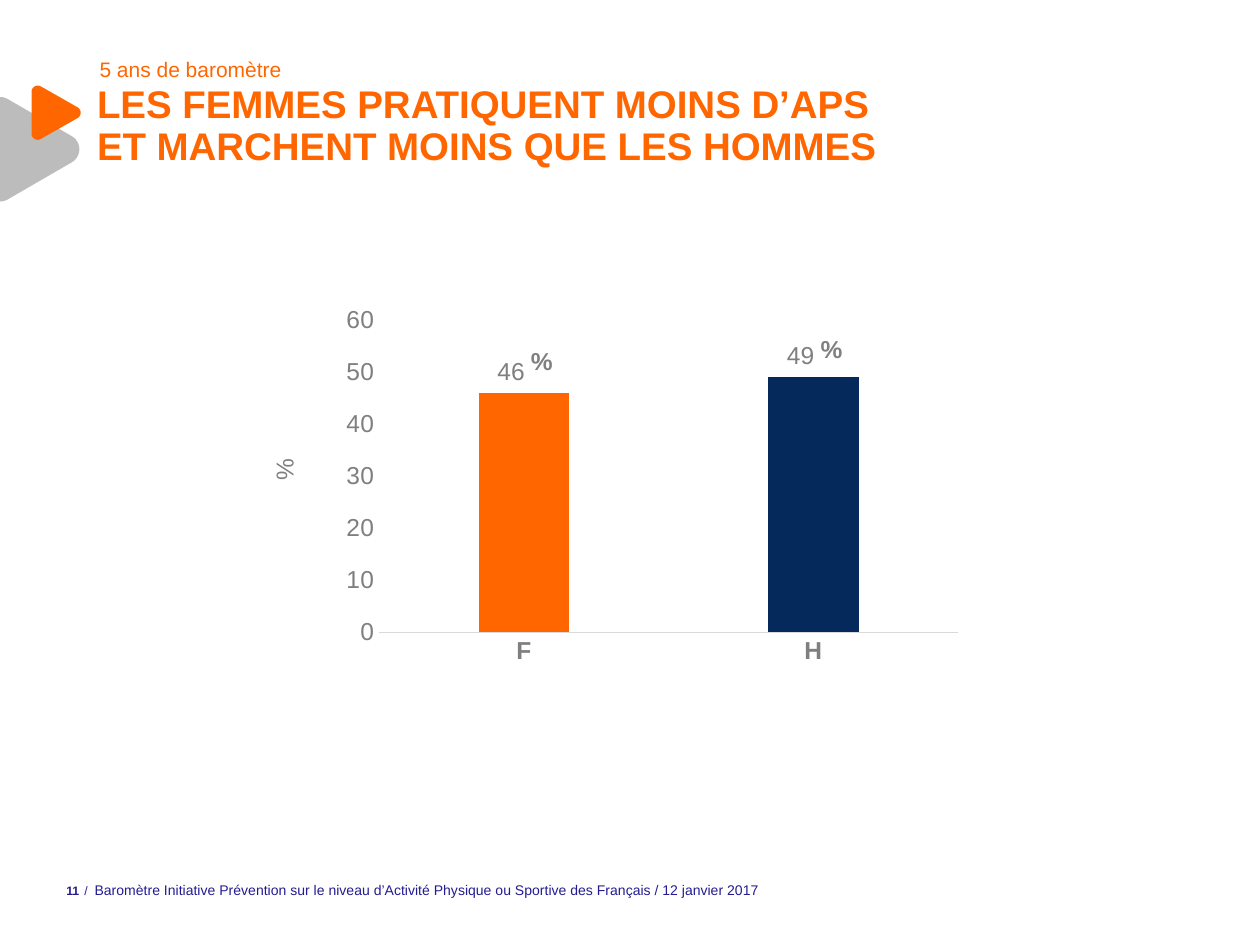
from math import cos, radians, sin

from lxml.etree import SubElement
from pptx import Presentation
from pptx.chart.data import CategoryChartData
from pptx.dml.color import RGBColor
from pptx.enum.chart import XL_CHART_TYPE as Kind, XL_LABEL_POSITION as Spot, XL_TICK_MARK as Tick
from pptx.enum.text import MSO_ANCHOR as Anchor, PP_ALIGN as Align
from pptx.oxml.ns import qn
from pptx.util import Inches, Pt

ORANGE = RGBColor(0xFF, 0x66, 0x00)
NAVY = RGBColor(0x05, 0x29, 0x5B)
INK = RGBColor(0x23, 0x1C, 0x91)
GREY = RGBColor(0x7F, 0x7F, 0x7F)
PALE = RGBColor(0xBC, 0xBC, 0xBC)
RULE = RGBColor(0xD9, 0xD9, 0xD9)
FONT = "Arial"


def style(font, size, color, bold=False):
    """Set the face, size, colour and weight of a font."""
    font.name, font.size, font.bold = FONT, Pt(size), bold
    font.color.rgb = color


def add_text(slide, box, text, size=12, color=ORANGE, bold=False, align=Align.LEFT,
             anchor=Anchor.TOP, pad=(0.04, 0), wrap=True, space=None):
    """Add a text box; text is a string or a list of (text, size) runs."""
    frame = slide.shapes.add_textbox(*map(Inches, box)).text_frame
    frame.word_wrap, frame.vertical_anchor = wrap, anchor
    frame.margin_left = frame.margin_right = Inches(pad[0])
    frame.margin_top = frame.margin_bottom = Inches(pad[1])
    para = frame.paragraphs[0]
    para.alignment, para.line_spacing = align, space
    for part, points in [(text, size)] if isinstance(text, str) else text:
        for i, line in enumerate(part.split("\n")):
            if i:
                para.add_line_break()
            run = para.add_run()
            run.text = line
            style(run.font, points, color, bold)


def add_arrow(slide, box, radius, color):
    """Draw a right-pointing triangle with round corners."""
    left, top, width, height = box
    hubs = [(radius, radius, 180), (width - radius, height / 2, 300),
            (radius, height - radius, 60)]
    points = [(Inches(left + x + radius * cos(radians(start + step))),
               Inches(top + y + radius * sin(radians(start + step))))
              for x, y, start in hubs for step in range(0, 121, 10)]
    pen = slide.shapes.build_freeform(*points[0], scale=1.0)
    pen.add_line_segments(points[1:], close=True)
    shape = pen.convert_to_shape()
    shape.shadow.inherit = False
    shape.fill.solid()
    shape.fill.fore_color.rgb = color
    shape.line.fill.background()


def set_layout(owner, before, inner=False, edge=True, **place):
    """Fix the place of a chart part, or its shift, as shares of the chart."""
    for old in owner.findall(qn("c:layout")):
        owner.remove(old)
    layout = SubElement(owner, qn("c:layout"))
    manual = SubElement(layout, qn("c:manualLayout"))
    if inner:
        SubElement(manual, qn("c:layoutTarget"), val="inner")
    for key in "xy" if edge else "":
        SubElement(manual, qn(f"c:{key}Mode"), val="edge")
    for key, share in place.items():
        SubElement(manual, qn(f"c:{key}"), val=str(share))
    owner.insert(before, layout)


def add_bars(slide, box):
    """Add the column chart of women and men."""
    data = CategoryChartData(number_format="0")
    data.categories = ["F", "H"]
    data.add_series("Series 1", (46, 49))
    chart = slide.shapes.add_chart(Kind.COLUMN_CLUSTERED, *map(Inches, box), data).chart
    chart.has_legend = chart.has_title = False
    style(chart.font, 14, GREY)
    plot = chart.plots[0]
    set_layout(plot._element.getparent(), 0, inner=True, x=0.183, y=0.057, w=0.679, h=0.674)
    plot.gap_width, plot.overlap, plot.vary_by_categories = 219, -27, False
    series = plot.series[0]
    for i, (label, color) in enumerate([("46", ORANGE), ("49", NAVY)]):
        point = series.points[i]
        point.format.fill.solid()
        point.format.fill.fore_color.rgb = color
        run = point.data_label.text_frame.paragraphs[0].add_run()
        run.text = label
        style(run.font, 14, GREY)
        point.data_label.position = Spot.OUTSIDE_END
    for label in series._element.iter(qn("c:dLbl")):
        set_layout(label, 1, edge=False, x=-0.015, y=-0.005)

    cats, vals = chart.category_axis, chart.value_axis
    for axis, bold in (cats, True), (vals, False):
        axis.major_tick_mark = axis.minor_tick_mark = Tick.NONE
        axis.has_major_gridlines = False
        style(axis.tick_labels.font, 14, GREY, bold)
    cats.format.line.color.rgb = RULE
    cats.format.line.width = Pt(0.75)
    vals.format.line.fill.background()
    vals.minimum_scale, vals.maximum_scale, vals.major_unit = 0, 60, 10
    vals.tick_labels.number_format = "0"
    vals.tick_labels.number_format_is_linked = False
    frame = vals.axis_title.text_frame
    frame._txBody.bodyPr.set("rot", "-5400000")
    run = frame.paragraphs[0].add_run()
    run.text = "%"
    style(run.font, 14, GREY)
    set_layout(vals.axis_title._element, 1, x=0.048, y=0.345)


def add_head(slide, left, top):
    """Place the arrows, the overline and the title."""
    add_arrow(slide, (left - 0.12, top + 0.32, 0.75, 0.83), 0.12, PALE)
    add_arrow(slide, (left + 0.25, top + 0.23, 0.39, 0.43), 0.05, ORANGE)
    add_text(slide, (left + 0.75, top, 8.5, 0.2), "5 ans de baromètre")
    add_text(slide, (left + 0.73, top + 0.23, 8.29, 1.76),
             "LES FEMMES PRATIQUENT MOINS D’APS\nET MARCHENT MOINS QUE LES HOMMES",
             size=22, bold=True, space=0.9)


def add_body(slide, left, top):
    """Place the chart and the percent signs beside its labels."""
    add_bars(slide, (left, top, 6.77, 3.68))
    for x, y in (2.34, 0.37), (4.64, 0.27):
        add_text(slide, (left + x, top + y, 0.38, 0.34), "%", size=14, color=GREY,
                 bold=True, align=Align.CENTER, pad=(0.1, 0.05), wrap=False)


def add_foot(slide, left, top):
    """Place the page number and the running footer."""
    add_text(slide, (left, top + 0.05, 0.2, 0.12), "11", size=7, color=INK, bold=True,
             align=Align.RIGHT, anchor=Anchor.MIDDLE, wrap=False)
    add_text(slide, (left + 0.16, top, 6.1, 0.2),
             [("/  ", 7), ("Baromètre Initiative Prévention sur le niveau d’Activité Physique "
                           "ou Sportive des Français / 12 janvier 2017", 8)],
             color=INK, anchor=Anchor.MIDDLE)


def main():
    """Build the slide and save it."""
    deck = Presentation()
    deck.slide_width, deck.slide_height = Inches(10), Inches(7.5)
    slide = deck.slides.add_slide(deck.slide_layouts[6])
    add_foot(slide, 0.47, 6.96)
    add_body(slide, 1.77, 2.33)
    add_head(slide, 0, 0.45)
    deck.save("out.pptx")


if __name__ == "__main__":
    main()
